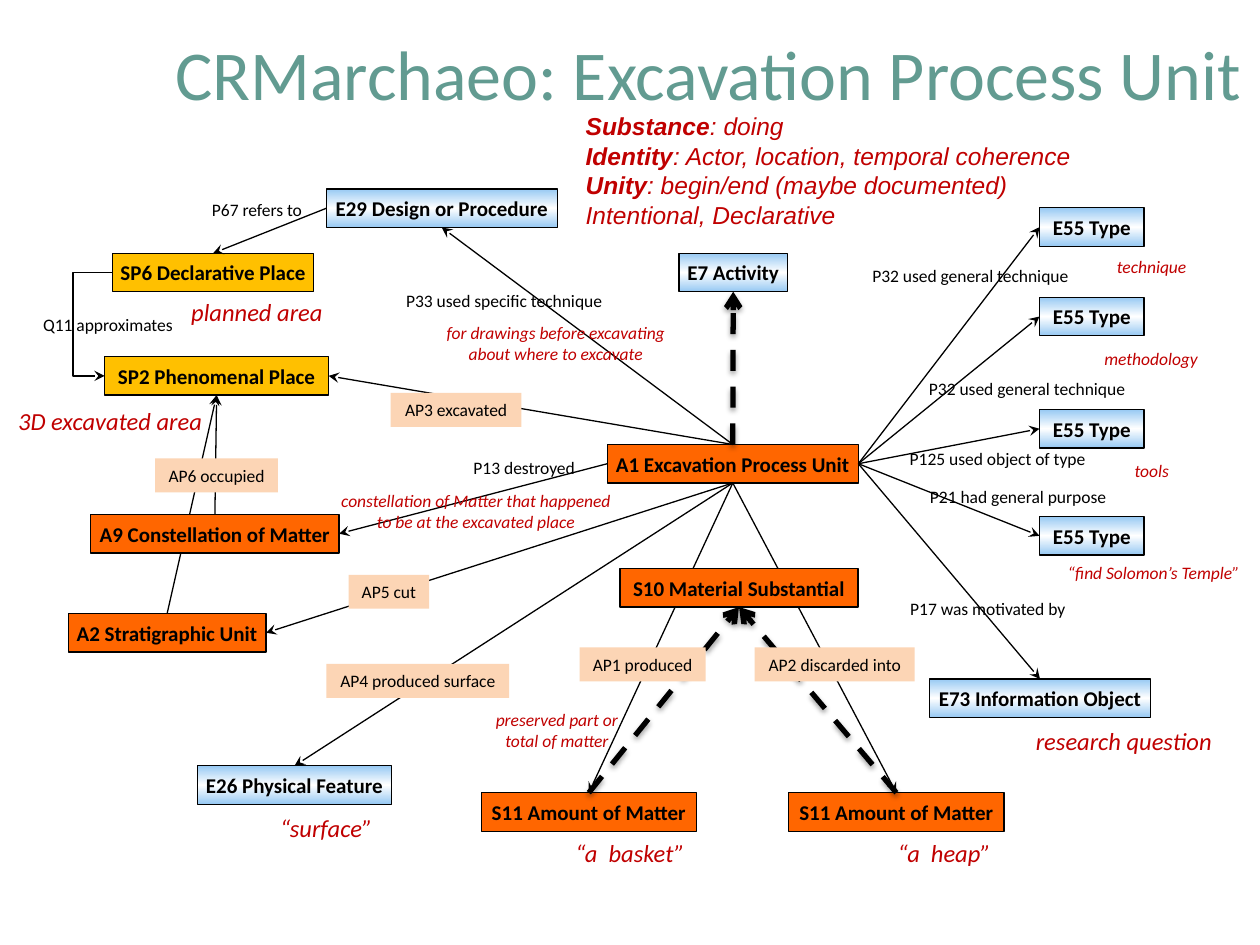
from copy import deepcopy

from lxml import etree
from pptx import Presentation
from pptx.dml import color as dml_color
from pptx.enum import dml, shapes, text
from pptx.oxml import ns
from pptx.util import Pt

BLACK, RED, TEAL = "000000", "C00000", "629B91"
ORANGE, YELLOW, PEACH = "FF6600", "FFC000", "FCD5B5"
BLUE_GRADIENT = ("97C9F3", "FFFFFF", "97C9F3")
TOP, LEFT, BOTTOM, RIGHT = range(4)
BOX_HEIGHT = 22
TYPE_TOPS = (118.8, 169.9, 234, 295.2)

# Entity boxes: key, text, left, top, width, fill
BOXES = [
    ("A1", "A1 Excavation Process Unit", 347, 254, 143.5, ORANGE),
    ("E7", "E7 Activity", 388, 144.7, 62, BLUE_GRADIENT),
    ("E29", "E29 Design or Procedure", 186.5, 108, 132, BLUE_GRADIENT),
    ("E73", "E73 Information Object", 531.3, 388, 126, BLUE_GRADIENT),
    ("E26", "E26 Physical Feature", 112.8, 437.6, 111, BLUE_GRADIENT),
    ("SP2", "SP2 Phenomenal Place", 59.8, 203.8, 128, YELLOW),
    ("SP6", "SP6 Declarative Place", 64.3, 144.7, 115, YELLOW),
    ("A2", "A2 Stratigraphic Unit", 39, 350.6, 113, ORANGE),
    ("S11 basket", "S11 Amount of Matter", 275, 453, 123, ORANGE),
    ("S11 heap", "S11 Amount of Matter", 450.7, 453, 123, ORANGE),
] + [(f"E55 {i}", "E55 Type", 594, top, 59.8, BLUE_GRADIENT)
     for i, top in enumerate(TYPE_TOPS)]

# Boxes that lie over passing lines
FRONT_BOXES = [
    ("S10", "S10 Material Substantial", 354.3, 324.9, 136, ORANGE),
    ("A9", "A9 Constellation of Matter", 51.8, 294, 142, ORANGE),
]

# Property arrows: from, side, to, side
PROPERTIES = [
    ("A2", TOP, "SP2", BOTTOM),
    ("A1", TOP, "SP2", RIGHT),
    ("A1", TOP, "E29", BOTTOM),
    ("E29", LEFT, "SP6", TOP),
    ("A1", BOTTOM, "A2", RIGHT),
    ("A1", BOTTOM, "E26", TOP),
    ("A1", BOTTOM, "S11 basket", TOP),
    ("A1", BOTTOM, "S11 heap", TOP),
    ("A1", RIGHT, "E73", TOP),
] + [("A1", RIGHT, f"E55 {i}", LEFT) for i in range(len(TYPE_TOPS))]
FRONT_PROPERTIES = [("A1", LEFT, "A9", RIGHT), ("A9", TOP, "SP2", BOTTOM)]
SUBCLASSES = [
    ("A1", TOP, "E7", BOTTOM),
    ("S11 basket", TOP, "S10", BOTTOM),
    ("S11 heap", TOP, "S10", BOTTOM),
]

# Filled property labels: text, left, top, width
CHIPS = [
    ("AP3 excavated", 223.2, 224.6, 74.8),
    ("AP6 occupied", 88.6, 262, 70.2),
    ("AP5 cut", 199.2, 328.5, 46),
    ("AP4 produced surface", 186.5, 379.4, 104.4),
    ("AP1 produced", 331.2, 370, 72),
    ("AP2 discarded into", 431.3, 370, 91.4),
]

# Plain property labels: text, left, top, width
LABELS = [
    ("P67 refers to", 113, 110.2, 67.7),
    ("P33 used specific technique", 223.9, 162, 128.2),
    ("Q11 approximates", 16.6, 176, 90),
    ("P13 destroyed", 262.8, 257.8, 73.4),
    ("P32 used general technique", 490.3, 147.9, 128.2),
    ("P32 used general technique", 522.7, 212.4, 128.2),
    ("P125 used object of type", 511, 252.3, 118),
    ("P21 had general purpose", 523.4, 274.3, 116.6),
    ("P17 was motivated by", 511.9, 338.4, 105),
]

# Red comments: text, left, top, width, size
COMMENTS = [
    ("technique", 630.7, 142.6, 54.7, 10),
    ("methodology", 623.5, 195.1, 68.4, 10),
    ("tools", 640.8, 259.2, 34.6, 10),
    ("“find Solomon’s Temple”", 600.5, 317.5, 117.4, 10),
    ("for drawings before excavating\nabout where to excavate", 246, 180.7, 143, 10),
    ("constellation of Matter that happened\nto be at the excavated place", 185.5, 276.5, 172.8, 10),
    ("preserved part or\ntotal of matter", 274.7, 401.8, 87, 10),
    ("planned area", 101.5, 166.3, 90.7, 14),
    ("3D excavated area", 2.9, 228.2, 120.2, 14),
    ("research question", 582.5, 411.1, 119.5, 14),
    ("“surface”", 152.6, 460.8, 67.7, 14),
    ("“a  basket”", 321.1, 475.4, 77.8, 14),
    ("“a  heap”", 505.4, 475.4, 68.4, 14),
]

DEFINITION = """Substance: doing
Identity: Actor, location, temporal coherence
Unity: begin/end (maybe documented)
Intentional, Declarative"""


def rgb(value):
    return dml_color.RGBColor.from_string(value)


def write(shape, content, size=10, color=BLACK, font="Calibri", bold=False,
          italic=False, bold_lead=False, align="CENTER", anchor="TOP", wrap=False):
    """Fill a shape with text; bold_lead makes the words before a colon bold."""
    frame = shape.text_frame
    frame.word_wrap = wrap
    frame.vertical_anchor = getattr(text.MSO_ANCHOR, anchor)
    for index, line in enumerate(content.split("\n")):
        paragraph = frame.paragraphs[0] if index == 0 else frame.add_paragraph()
        paragraph.alignment = getattr(text.PP_ALIGN, align)
        lead, colon, rest = line.partition(":") if bold_lead else (line, "", "")
        for words, is_bold in ((lead, bold or bool(colon)), (colon + rest, bold)):
            if words:
                run = paragraph.add_run()
                run.text = words
                run.font.name, run.font.size = font, Pt(size)
                run.font.bold, run.font.italic = is_bold, italic
                run.font.color.rgb = rgb(color)


def add_text(slide, content, left, top, width, height, **style):
    box = slide.shapes.add_textbox(Pt(left), Pt(top), Pt(width), Pt(height))
    write(box, content, **style)


def paint(shape, fill):
    """Apply one colour, or a vertical gradient of three colours."""
    if isinstance(fill, str):
        shape.fill.solid()
        shape.fill.fore_color.rgb = rgb(fill)
        return
    shape.fill.gradient()
    shape.fill.gradient_angle = 90
    stops = shape._element.spPr.find(f".//{ns.qn('a:gsLst')}")
    stops.append(deepcopy(stops[0]))
    for index, (stop, value) in enumerate(zip(shape.fill.gradient_stops, fill)):
        stop.color.rgb = rgb(value)
        stop.position = index / 2


def add_rectangle(slide, content, left, top, width, height, fill, outlined, **style):
    shape = slide.shapes.add_shape(shapes.MSO_SHAPE.RECTANGLE, Pt(left), Pt(top), Pt(width), Pt(height))
    shape.shadow.inherit = False
    paint(shape, fill)
    if outlined:
        shape.line.color.rgb = rgb(BLACK)
        shape.line.width = Pt(0.75)
    else:
        shape.line.fill.background()
    write(shape, content, anchor="MIDDLE", **style)
    return shape


def add_boxes(slide, rows):
    return {key: add_rectangle(slide, content, left, top, width, BOX_HEIGHT, fill, True, size=12, bold=True)
            for key, content, left, top, width, fill in rows}


def connect(slide, boxes, start, start_side, end, end_side, subclass=False, bend=None):
    """Join two boxes; bend is how far an elbow runs out from its start."""
    kind = shapes.MSO_CONNECTOR.ELBOW if bend else shapes.MSO_CONNECTOR.STRAIGHT
    line = slide.shapes.add_connector(kind, 0, 0, 0, 0)
    line.begin_connect(boxes[start], start_side)
    line.end_connect(boxes[end], end_side)
    line.line.color.rgb = rgb(BLACK)
    line.line.width = Pt(3 if subclass else 0.75)
    if subclass:
        line.line.dash_style = dml.MSO_LINE.DASH
    properties = line._element.spPr
    etree.SubElement(line.line._get_or_add_ln(), ns.qn("a:tailEnd"), type="arrow" if subclass else "stealth")
    effects = etree.SubElement(properties, ns.qn("a:effectLst"))
    if subclass:
        shadow = etree.SubElement(effects, ns.qn("a:outerShdw"), blurRad=str(Pt(3.1)),
                                  dist=str(Pt(1.6)), dir="5400000", rotWithShape="0")
        tint = etree.SubElement(shadow, ns.qn("a:srgbClr"), val=BLACK)
        etree.SubElement(tint, ns.qn("a:alpha"), val="38000")
    if bend:
        ratio = round(Pt(bend) / (line.begin_x - line.end_x) * 100000)
        guides = properties.find(f".//{ns.qn('a:avLst')}")
        etree.SubElement(guides, ns.qn("a:gd"), name="adj1", fmla=f"val {ratio}")


def main():
    presentation = Presentation()
    presentation.slide_width, presentation.slide_height = Pt(720), Pt(540)
    slide = presentation.slides.add_slide(presentation.slide_layouts[6])

    # Heading and definition
    add_text(slide, "CRMarchaeo: Excavation Process Unit", 12.2, 18.7, 704.2, 45.4,
             size=40, color=TEAL, align="RIGHT", anchor="MIDDLE", wrap=True)
    add_text(slide, DEFINITION, 327.6, 59.8, 308.2, 74.9, size=14, color=RED, font="Arial",
             italic=True, bold_lead=True, align="JUSTIFY", anchor="MIDDLE", wrap=True)

    # Boxes and arrows, from back to front
    boxes = add_boxes(slide, BOXES)
    for ends in PROPERTIES:
        connect(slide, boxes, *ends)
    connect(slide, boxes, "SP6", LEFT, "SP2", LEFT, bend=22.5)
    boxes.update(add_boxes(slide, FRONT_BOXES))
    for ends in FRONT_PROPERTIES:
        connect(slide, boxes, *ends)
    for ends in SUBCLASSES:
        connect(slide, boxes, *ends, subclass=True)

    # Labels and comments
    for content, left, top, width in CHIPS:
        add_rectangle(slide, content, left, top, width, 19.4, PEACH, False)
    for content, left, top, width in LABELS:
        add_text(slide, content, left, top, width, 19.4)
    for content, left, top, width, size in COMMENTS:
        height = 7.2 + 1.22 * size * len(content.split("\n"))
        add_text(slide, content, left, top, width, height, size=size, color=RED, italic=True)

    presentation.save("out.pptx")


if __name__ == "__main__":
    main()
